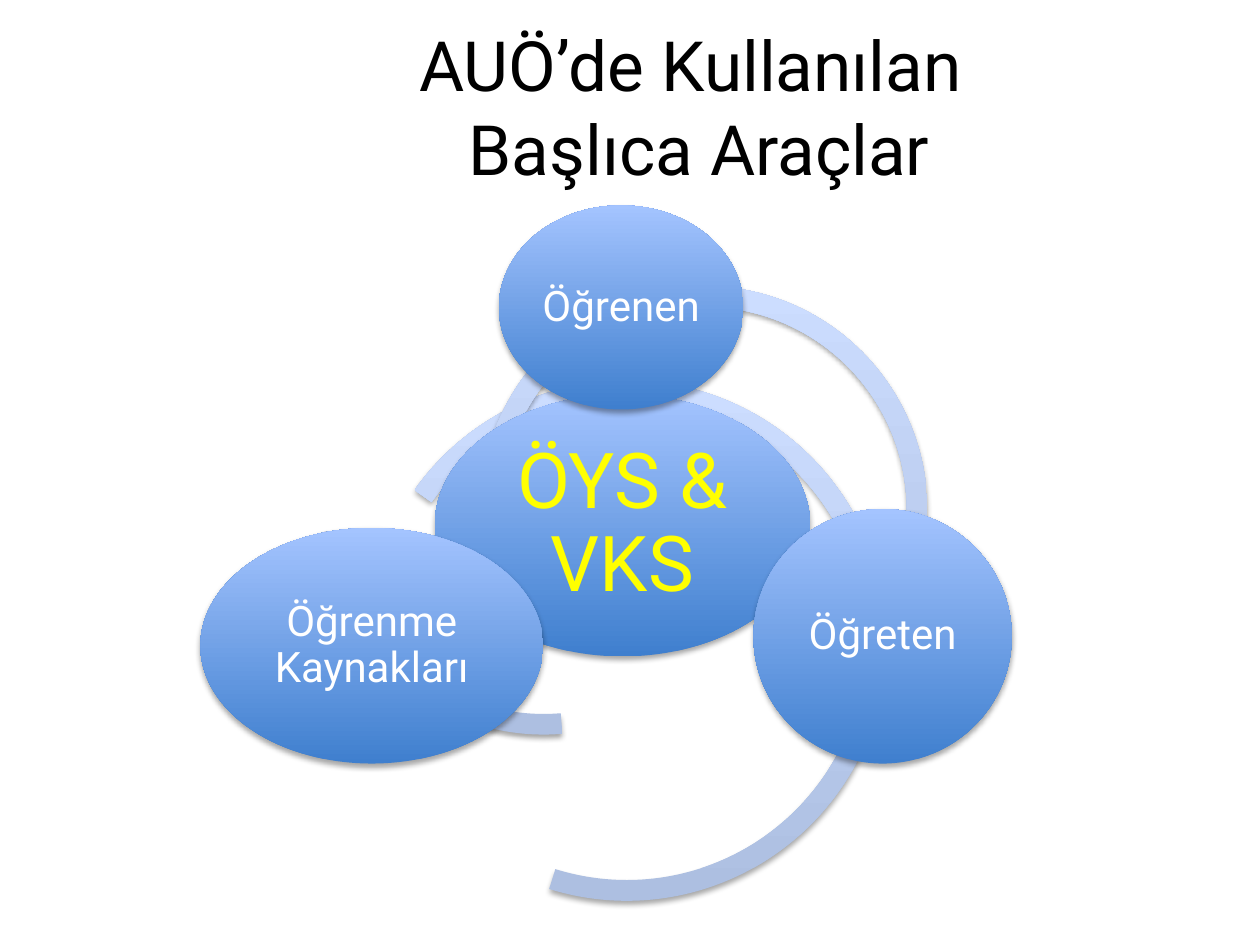
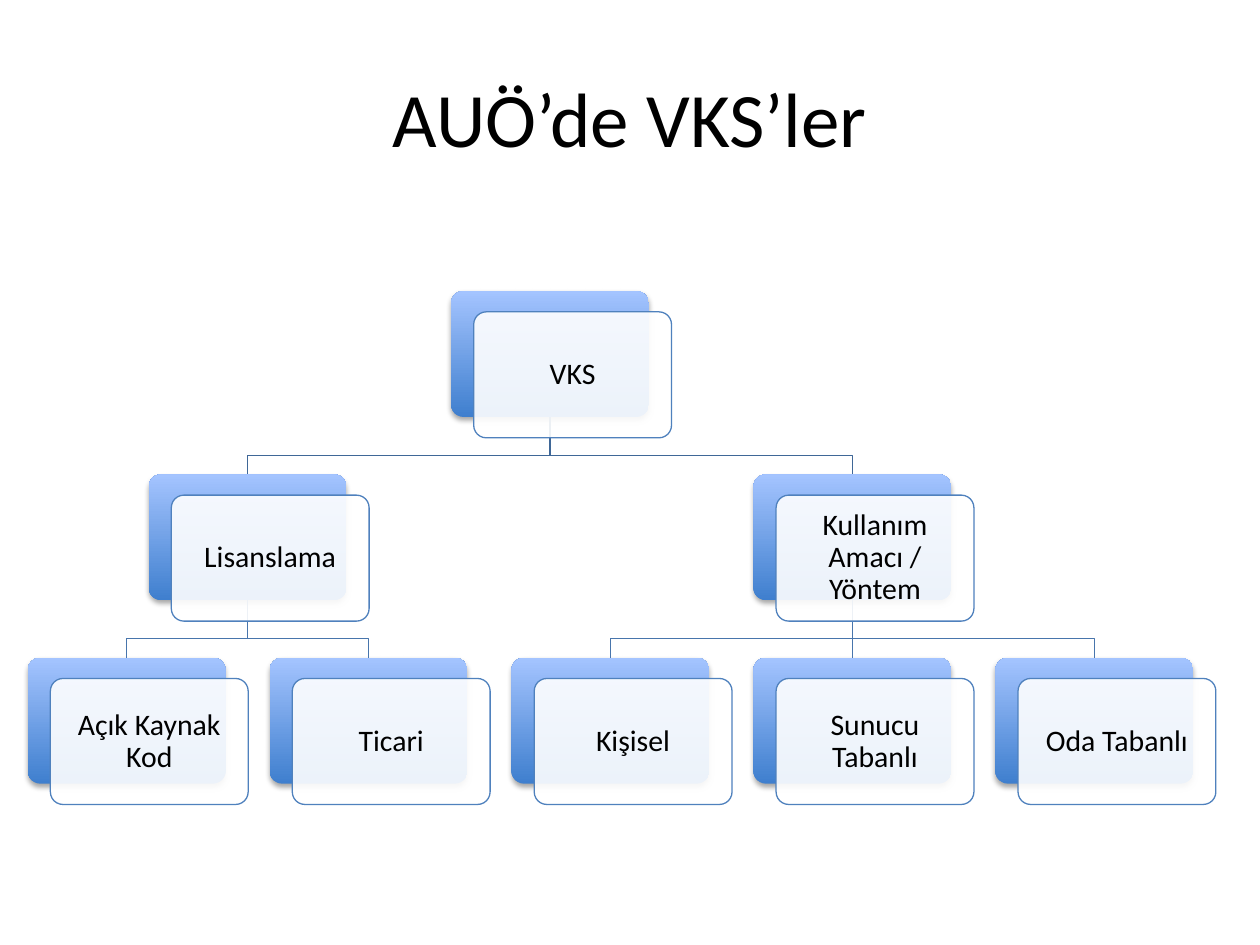
"""Build two slides: a ring of learning tools and a tree of VKS types."""
import lxml.etree
import pptx
import pptx.dml.color
import pptx.enum.shapes
import pptx.enum.text
import pptx.oxml.ns
import pptx.util

COLORS = {
    "black": "000000", "white": "FFFFFF", "yellow": "FFFF00",
    "node_low": "3F7FCE", "node_high": "A4C4FF",
    "ring_low": "ADBFE1", "ring_high": "CCDDFF",
    "border": "4F81BD", "link_top": "3F6797", "link_low": "4875AC",
}
RGB = {name: pptx.dml.color.RGBColor.from_string(c) for name, c in COLORS.items()}
SHAPE = pptx.enum.shapes.MSO_SHAPE
qn = pptx.oxml.ns.qn

prs = pptx.Presentation()
prs.slide_width, prs.slide_height = pptx.util.Inches(10), pptx.util.Inches(7.5)
u = prs.slide_width // 100


def gloss(sp, kind):
    """Give a shape an upward gradient and a soft shadow below it."""
    sp.fill.gradient()
    sp.fill.gradient_angle = 90
    for stop, end in zip(sp.fill.gradient_stops, ("low", "high")):
        stop.color.rgb = RGB[f"{kind}_{end}"]
    sp.line.fill.background()
    sp.shadow.inherit = False
    effects = sp._element.spPr.find(qn("a:effectLst"))
    shadow = lxml.etree.SubElement(effects, qn("a:outerShdw"), blurRad="39370",
                                   dist="22860", dir="5400000", rotWithShape="0")
    black = lxml.etree.SubElement(shadow, qn("a:srgbClr"), val=COLORS["black"])
    lxml.etree.SubElement(black, qn("a:alpha"), val="35000")


def write(sp, text, size, font, color, inset, spacing=0.9):
    """Put centred text into a shape."""
    tf = sp.text_frame
    tf.text = text
    tf.word_wrap = True
    tf.vertical_anchor = pptx.enum.text.MSO_ANCHOR.MIDDLE
    tf.margin_left = tf.margin_right = tf.margin_top = tf.margin_bottom = int(inset * u)
    for p in tf.paragraphs:
        p.alignment = pptx.enum.text.PP_ALIGN.CENTER
        p.line_spacing = spacing
        for r in p.runs:
            r.font.size = pptx.util.Pt(size)
            r.font.name = font
            r.font.color.rgb = RGB[color]


titles = [
    ("AUÖ’de Kullanılan \vBaşlıca Araçlar", 39.6, "Roboto", (13, 0.6, 85, 15.6)),
    ("AUÖ’de VKS’ler", 44, "Calibri", (5, 3, 90, 12.5)),
]
slides = []
for text, size, font, box in titles:
    slide = prs.slides.add_slide(prs.slide_layouts[6])
    sp = slide.shapes.add_textbox(*[int(n * u) for n in box])
    write(sp, text, size, font, "black", 0.5, 1.0)
    slides.append(slide)
ring, tree = slides

arcs = [
    ((25.4, 22.8, 35.5, 35.5), (85.19, 174.5), 0.046),
    ((29.1, 30.2, 41.3, 41.3), (215.36, 107.36), 0.04),
    ((38.1, 22.7, 35.5, 35.5), (148.74, 21.31), 0.046),
]
for box, angles, thickness in arcs:
    sp = ring.shapes.add_shape(SHAPE.BLOCK_ARC, *[int(n * u) for n in box])
    for i, degrees in enumerate(angles):
        sp.adjustments[i] = degrees * 0.6
    sp.adjustments[2] = thickness
    gloss(sp, "ring")

tools = [
    ("ÖYS & VKS", (34.5, 31.3, 29.8, 20.8), 44, "yellow", 0.6),
    ("Öğrenen", (39.6, 16.3, 19.4, 16.2), 24, "white", 0.3),
    ("Öğreten", (59.8, 40.4, 20.5, 20.2), 24, "white", 0.3),
    ("Öğrenme Kaynakları", (15.9, 41.9, 27.2, 18.7), 24, "white", 0.3),
]
for text, box, size, color, inset in tools:
    sp = ring.shapes.add_shape(SHAPE.OVAL, *[int(n * u) for n in box])
    gloss(sp, "node")
    write(sp, text, size, "Roboto", color, inset)

left, top, col_step, row_step = 2.2 * u, 23.1 * u, 19.2 * u, 14.55 * u
card_w, card_h = int(15.7 * u), int(10 * u)
shift_x, shift_y = int(1.8 * u), int(1.65 * u)
branches = {
    "Lisanslama": ["Açık Kaynak Kod", "Ticari"],
    "Kullanım Amacı / Yöntem": ["Kişisel", "Sunucu Tabanlı", "Oda Tabanlı"],
}
children = {"VKS": list(branches), **branches}
leaves = [leaf for group in branches.values() for leaf in group]
places = {leaf: (col, 2) for col, leaf in enumerate(leaves)}
for parent, row in [(name, 1) for name in branches] + [("VKS", 0)]:
    cols = [places[child][0] for child in children[parent]]
    places[parent] = (sum(cols) / len(cols), row)

cards = {}
for name, (col, row) in places.items():
    sp = tree.shapes.add_shape(SHAPE.ROUNDED_RECTANGLE, int(left + col * col_step),
                               int(top + row * row_step), card_w, card_h)
    sp.adjustments[0] = 0.1
    gloss(sp, "node")
    cards[name] = sp

for parent, group in children.items():
    for child in group:
        start, end = cards[parent], cards[child]
        x1, y1 = start.left + card_w // 2, start.top + card_h
        x2, y2 = end.left + card_w // 2, end.top
        if x1 == x2:
            link = tree.shapes.add_connector(
                pptx.enum.shapes.MSO_CONNECTOR.STRAIGHT, x1, y1, x2, y2)
            link.begin_connect(start, 2)
            link.end_connect(end, 0)
        else:
            bend = y1 + (y2 - y1) * 2 // 3
            outline = tree.shapes.build_freeform(x1, y1)
            outline.add_line_segments([(x1, bend), (x2, bend), (x2, y2)], close=False)
            link = outline.convert_to_shape()
            link.fill.background()
        link.line.color.rgb = RGB["link_top" if parent == "VKS" else "link_low"]
        link.line.width = pptx.util.Pt(0.75)
        lxml.etree.SubElement(link._element.spPr, qn("a:effectLst"))

for name, card in cards.items():
    sp = tree.shapes.add_shape(SHAPE.ROUNDED_RECTANGLE, card.left + shift_x,
                               card.top + shift_y, card_w, card_h)
    sp.adjustments[0] = 0.1
    sp.shadow.inherit = False
    sp.fill.solid()
    sp.fill.fore_color.rgb = RGB["white"]
    white = sp._element.spPr.find(qn("a:solidFill")).find(qn("a:srgbClr"))
    lxml.etree.SubElement(white, qn("a:alpha"), val="90000")
    sp.line.color.rgb = RGB["border"]
    sp.line.width = pptx.util.Pt(0.75)
    write(sp, name, 17, "Calibri", "black", 0.7)

prs.save("out.pptx")
